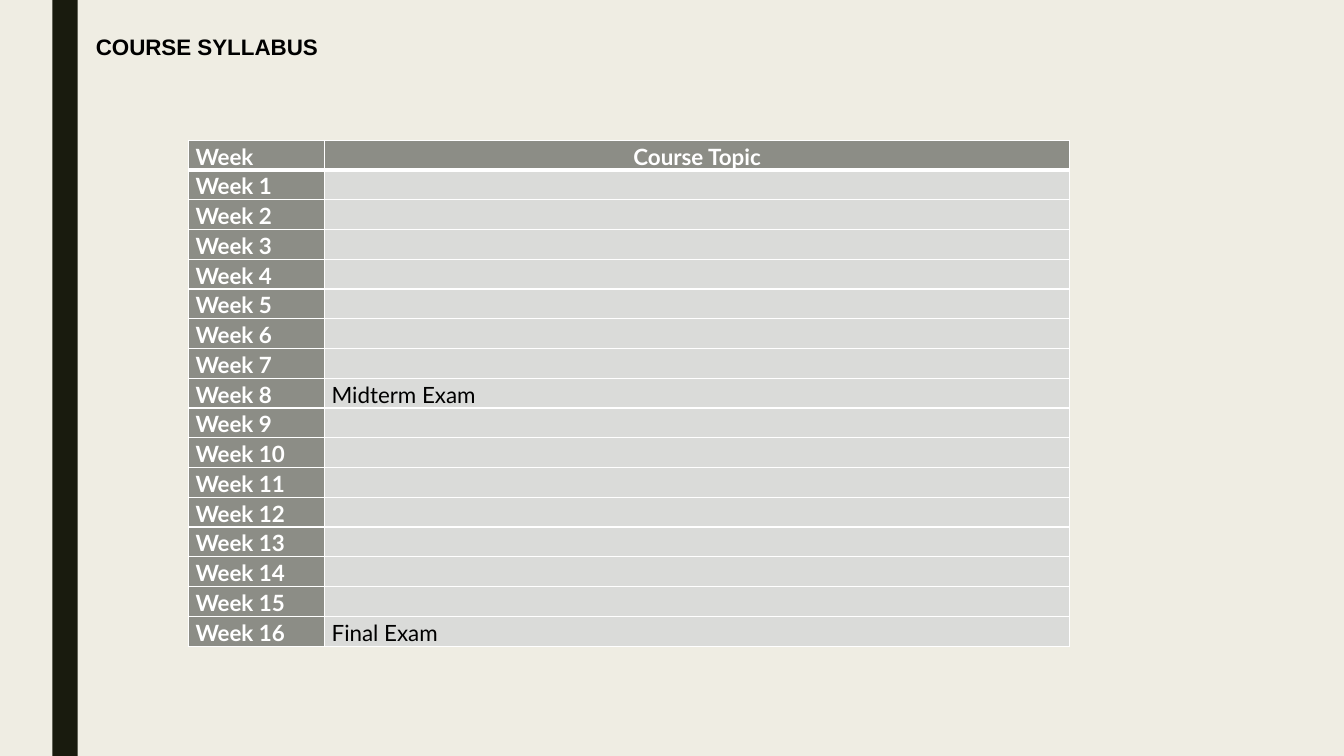
from dataclasses import dataclass

from lxml.etree import SubElement
from pptx import Presentation
from pptx.dml.color import RGBColor
from pptx.enum.shapes import MSO_SHAPE
from pptx.enum.text import MSO_ANCHOR, PP_ALIGN
from pptx.oxml.ns import qn
from pptx.util import Inches, Pt


@dataclass(frozen=True)
class Theme:
    back: str = "EFEDE3"
    bar: str = "191B0E"
    head: str = "8C8D86"
    body: str = "DADBD9"
    light: str = "FFFFFF"
    dark: str = "000000"
    title: str = "Arial"
    text: str = "Lato"
    size: int = 16
    thin: int = 1
    thick: int = 3


class Deck:
    def __init__(self, theme):
        self.theme = theme
        self.prs = Presentation()
        self.prs.slide_width = Inches(13.33)
        self.prs.slide_height = Inches(7.5)
        self.slide = self.prs.slides.add_slide(self.prs.slide_layouts[5])
        self.paint(self.slide.background.fill, theme.back)

    def paint(self, fill, color):
        fill.solid()
        fill.fore_color.rgb = RGBColor.from_string(color)

    def style(self, para, face, color, bold):
        for run in para.runs:
            run.font.name = face
            run.font.size = Pt(self.theme.size)
            run.font.bold = bold
            run.font.color.rgb = RGBColor.from_string(color)

    def bar(self, *box):
        shape = self.slide.shapes.add_shape(MSO_SHAPE.RECTANGLE, *map(Inches, box))
        shape.shadow.inherit = False
        self.paint(shape.fill, self.theme.bar)
        shape.line.fill.background()

    def title(self, text, *box):
        shape = self.slide.shapes.title
        shape.left, shape.top, shape.width, shape.height = map(Inches, box)
        frame = shape.text_frame
        frame.text = text
        frame.word_wrap = True
        frame.vertical_anchor = MSO_ANCHOR.MIDDLE
        para = frame.paragraphs[0]
        para.alignment = PP_ALIGN.LEFT
        self.style(para, self.theme.title, self.theme.dark, True)

    def edges(self, cell, head):
        props = cell._tc.get_or_add_tcPr()
        for side in "LRTB":
            # The rule under the header row is heavier
            width = self.theme.thick if head and side == "B" else self.theme.thin
            line = SubElement(props, qn(f"a:ln{side}"), w=str(Pt(width)))
            fill = SubElement(line, qn("a:solidFill"))
            SubElement(fill, qn("a:srgbClr"), val=self.theme.light)

    def cell(self, cell, text, head, first):
        theme = self.theme
        label = head or first
        self.edges(cell, head)
        self.paint(cell.fill, theme.head if label else theme.body)
        cell.margin_left = cell.margin_right = Inches(0.07)
        cell.margin_top, cell.margin_bottom = Inches(0.01), 0
        cell.vertical_anchor = MSO_ANCHOR.MIDDLE if head else MSO_ANCHOR.TOP
        para = cell.text_frame.paragraphs[0]
        para.alignment = PP_ALIGN.CENTER if head and not first else PP_ALIGN.LEFT
        if text:
            para.text = text
            para.line_spacing = 1.07
            para.space_after = Pt(8)
            self.style(para, theme.text, theme.light if label else theme.dark, label)
        else:
            # Keeps blank rows as low as the filled ones
            SubElement(para._p, qn("a:endParaRPr"), sz=str(theme.size * 100))

    def table(self, rows, left, top, widths, height):
        frame = self.slide.shapes.add_table(
            len(rows), len(widths), Inches(left), Inches(top),
            Inches(sum(widths)), Inches(height))
        grid = frame.table
        for col, width in zip(grid.columns, widths):
            col.width = Inches(width)
        for r, row in enumerate(rows):
            for c, text in enumerate(row):
                self.cell(grid.cell(r, c), text, r == 0, c == 0)


def main():
    deck = Deck(Theme())

    # Side bar and title
    deck.bar(0.52, 0, 0.25, 7.5)
    deck.title("COURSE SYLLABUS", 0.85, 0.28, 3.25, 0.37)

    # Weekly plan
    exams = {8: "Midterm Exam", 16: "Final Exam"}
    rows = [("Week", "Course Topic")]
    rows += [(f"Week {n}", exams.get(n, "")) for n in range(1, 17)]
    deck.table(rows, 1.87, 1.39, (1.35, 7.39), 5.02)

    deck.prs.save("out.pptx")


if __name__ == "__main__":
    main()
